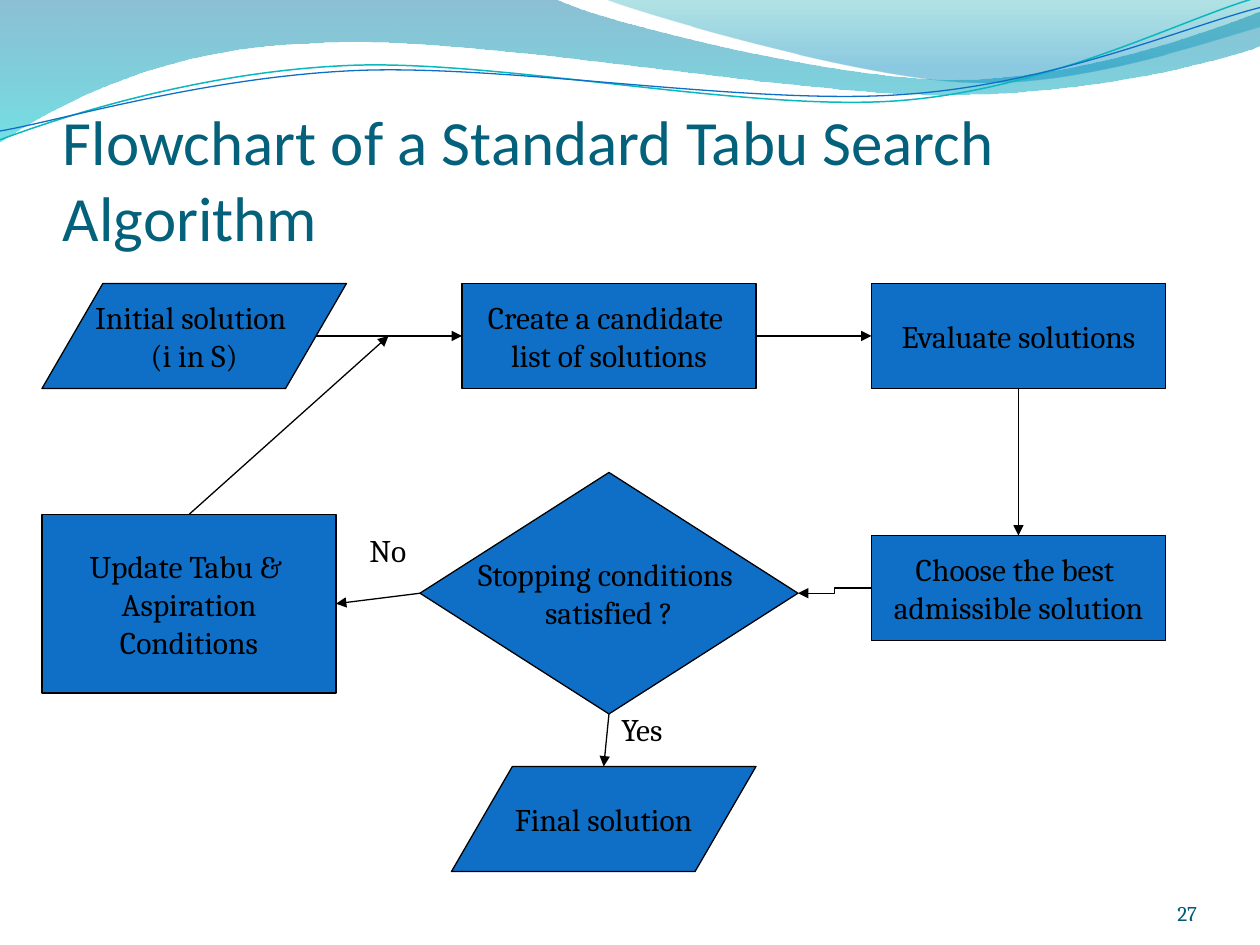
from lxml.etree import SubElement
from pptx import Presentation
from pptx.dml.color import RGBColor
from pptx.enum.shapes import MSO_CONNECTOR, MSO_SHAPE
from pptx.enum.text import MSO_ANCHOR, PP_ALIGN
from pptx.oxml.ns import qn
from pptx.util import Pt

THEME = {
    "title_font": "Calibri", "body_font": "Cambria",
    "title_size": 36, "body_size": 18, "number_size": 12,
    "title": "04617B", "number": "045D75", "text": "000000",
    "box": "0F6FC6", "line": "000000", "line_width": 0.75,
}

# Content: name -> (preset shape, (left, top, width, height), lines of text)
BOXES = {
    "initial": (MSO_SHAPE.FLOWCHART_DATA, (24, 162, 174, 60), ["Initial solution ", "(i in S)"]),
    "create": (MSO_SHAPE.RECTANGLE, (264, 162, 168, 60), ["Create a candidate ", "list of solutions"]),
    "evaluate": (MSO_SHAPE.RECTANGLE, (498, 162, 168, 60), ["Evaluate solutions"]),
    "choose": (MSO_SHAPE.RECTANGLE, (498, 306, 168, 60), ["Choose the best ", "admissible solution"]),
    "stop": (MSO_SHAPE.DIAMOND, (240, 270, 216, 138), ["Stopping conditions ", "satisfied ?"]),
    "update": (MSO_SHAPE.RECTANGLE, (24, 294, 168, 102), ["Update Tabu & ", "Aspiration", "Conditions"]),
    "final": (MSO_SHAPE.FLOWCHART_DATA, (258, 438, 174, 60), ["Final solution"]),
}
# Arrows: (box, side) to (box, side), or to a fixed point
ARROWS = [
    (("initial", "right"), ("create", "left")),
    (("create", "right"), ("evaluate", "left")),
    (("evaluate", "bottom"), ("choose", "top")),
    (("choose", "left"), ("stop", "right")),
    (("stop", "bottom"), ("final", "top")),
    (("stop", "left"), ("update", "right")),
    (("update", "top"), (222, 192)),
]
BENT_FROM = "choose"
LABELS = [("No", (204, 300, 37.5, 29)), ("Yes", (348, 402, 45, 29))]
TITLE = ("Flowchart of a Standard Tabu Search Algorithm", (36, 55.2, 648, 90))
NUMBER = ("27", (624, 500.5, 60, 28.5))

# Waves, in 72nds of the listed unit: two numbers are a corner, six a Bezier curve
UNIT = 72
BANDS = [
    # outline, gradient stops (position, colour, opacity)
    ([(0, 0), (4.4, -0.01), (4.76, 0.17, 6.64, 0.63, 7.58, 0.63),
      (8.53, 0.63, 9.58, 0.26, 10, 0.09), (10.01, 0.36),
      (9.83, 0.44, 8.7, 0.76, 7.46, 0.75), (6.22, 0.75, 3.82, 0.28, 2.57, 0.34),
      (1.29, 0.36, 0.46, 0.83, -0.01, 1.13), (0, 0)],
     [(0, "0074A1", 45), (1, "00C6CF", 55)]),
    ([(4.79, -0.01), (5.09, 0.11, 6.82, 0.62, 7.69, 0.65),
      (8.56, 0.69, 9.61, 0.32, 10, 0.21), (10, 0), (4.79, -0.01)],
     [(0, "00A1A9", 30), (0.8, "008BBF", 45)]),
]
STRANDS = [
    # outline, colour, line width
    ([(0, 1.11), (0.48, 0.93, 1.58, 0.57, 2.77, 0.52), (3.95, 0.47, 5.93, 0.89, 7.13, 0.8),
      (8.33, 0.71, 9.38, 0.15, 9.98, -0.02)], "0AB8BF", 0.85),
    ([(0, 1.04), (0.47, 0.96, 1.64, 0.61, 2.83, 0.56), (4.03, 0.51, 5.97, 0.84, 7.17, 0.75),
      (8.36, 0.67, 9.41, 0.21, 10, 0.06)], "0F6FC6", 0.75),
]


def rgb(name):
    return RGBColor.from_string(THEME.get(name, name))


def add_wave(slide, outline, close):
    """Draw straight segments between the nodes, then bend those that are curves."""
    parts = [[Pt(UNIT * value) for value in part] for part in outline]
    nodes = [part[-2:] for part in parts]
    builder = slide.shapes.build_freeform(*nodes[0])
    builder.add_line_segments(nodes[1:], close=close)
    shape = builder.convert_to_shape()
    shape.shadow.inherit = False
    segments = list(shape.element.spPr.iter(qn("a:lnTo")))
    for segment, part in zip(segments, parts[1:]):
        if len(part) == 2:
            continue
        segment.tag = qn("a:cubicBezTo")
        end = segment[0]
        for x, y in (part[:2], part[2:4]):
            control = SubElement(segment, qn("a:pt"))
            control.set("x", str(x - shape.left))
            control.set("y", str(y - shape.top))
        segment.append(end)
    return shape


def add_band(slide, outline, stops):
    shape = add_wave(slide, outline, True)
    shape.line.fill.background()
    shape.fill.gradient()
    shape.fill.gradient_angle = 270
    for stop, (position, color, _) in zip(shape.fill.gradient_stops, stops):
        stop.position = position
        stop.color.rgb = rgb(color)
    for color, (_, _, opacity) in zip(shape.element.spPr.iter(qn("a:srgbClr")), stops):
        SubElement(color, qn("a:alpha")).set("val", str(opacity * 1000))


def add_strand(slide, outline, color, width):
    shape = add_wave(slide, outline, False)
    shape.fill.background()
    shape.line.color.rgb = rgb(color)
    shape.line.width = Pt(width)


def write(shape, lines, role="body", color="text", align=PP_ALIGN.LEFT,
          anchor=MSO_ANCHOR.TOP, wrap=False, insets=None):
    frame = shape.text_frame
    frame.word_wrap = wrap
    frame.vertical_anchor = anchor
    if insets:
        (frame.margin_left, frame.margin_top,
         frame.margin_right, frame.margin_bottom) = map(Pt, insets)
    for index, line in enumerate(lines):
        paragraph = frame.add_paragraph() if index else frame.paragraphs[0]
        paragraph.alignment = align
        run = paragraph.add_run()
        run.text = line
        run.font.name = THEME["title_font" if role == "title" else "body_font"]
        run.font.size = Pt(THEME[role + "_size"])
        run.font.color.rgb = rgb(color)


def add_text(slide, text, place, **style):
    write(slide.shapes.add_textbox(*map(Pt, place)), [text], **style)


def add_box(slide, preset, place, lines):
    shape = slide.shapes.add_shape(preset, *map(Pt, place))
    shape.shadow.inherit = False
    shape.fill.solid()
    shape.fill.fore_color.rgb = rgb("box")
    shape.line.color.rgb = rgb("line")
    shape.line.width = Pt(THEME["line_width"])
    write(shape, lines, align=PP_ALIGN.CENTER, anchor=MSO_ANCHOR.MIDDLE)


def side_point(name, side):
    preset, (left, top, width, height), _ = BOXES[name]
    # A parallelogram is met a tenth of its width inside, and left of centre below
    inset = width / 10 if preset == MSO_SHAPE.FLOWCHART_DATA else 0
    return {
        "left": (left + inset, top + height / 2),
        "right": (left + width - inset, top + height / 2),
        "top": (left + width / 2, top),
        "bottom": (left + width / 2, top + height),
    }[side]


def add_arrow(slide, start, end):
    kind = MSO_CONNECTOR.ELBOW if start[0] == BENT_FROM else MSO_CONNECTOR.STRAIGHT
    target = side_point(*end) if end[0] in BOXES else end
    arrow = slide.shapes.add_connector(kind, *map(Pt, (*side_point(*start), *target)))
    arrow.line.color.rgb = rgb("line")
    arrow.line.width = Pt(THEME["line_width"])
    SubElement(arrow.line._get_or_add_ln(), qn("a:tailEnd")).set("type", "triangle")
    SubElement(arrow._element.spPr, qn("a:effectLst"))


def main():
    presentation = Presentation()
    presentation.slide_width, presentation.slide_height = Pt(720), Pt(540)
    slide = presentation.slides.add_slide(presentation.slide_layouts[6])

    # Waves along the top
    for band in BANDS:
        add_band(slide, *band)
    for strand in STRANDS:
        add_strand(slide, *strand)

    # Slide number and title
    add_text(slide, *NUMBER, role="number", color="number", align=PP_ALIGN.RIGHT,
             anchor=MSO_ANCHOR.BOTTOM, wrap=True, insets=(0, 0, 0, 0))
    add_text(slide, *TITLE, role="title", color="title",
             anchor=MSO_ANCHOR.BOTTOM, wrap=True, insets=(0, 3.6, 0, 0))

    # Flowchart
    for box in BOXES.values():
        add_box(slide, *box)
    for arrow in ARROWS:
        add_arrow(slide, *arrow)
    for label in LABELS:
        add_text(slide, *label)

    presentation.save("out.pptx")


if __name__ == "__main__":
    main()
